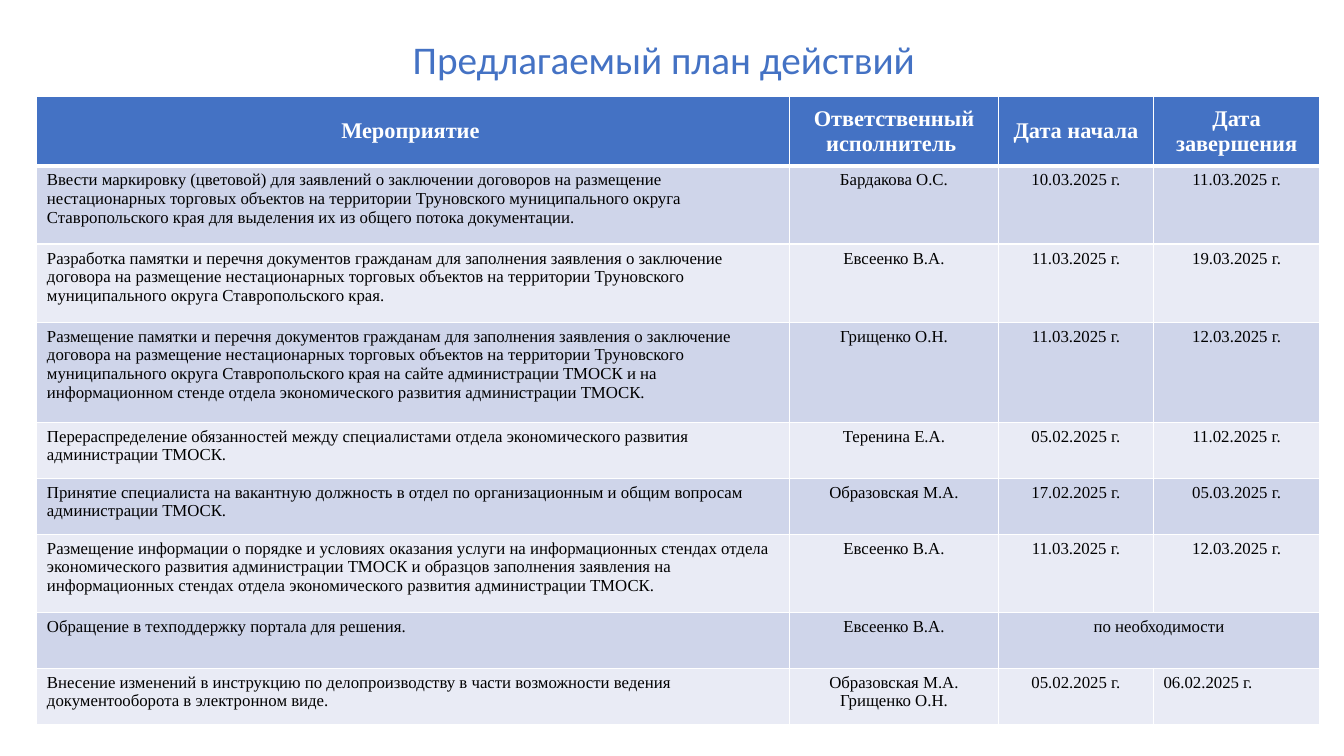
from lxml import etree
from pptx import Presentation
from pptx import util as u
from pptx.dml.color import RGBColor
from pptx.enum import text
from pptx.oxml.ns import qn

BLUE, WHITE, BLACK = "4472C4", "FFFFFF", "000000"
BANDS = ("CFD5EA", "E9EBF5")
MID, LEFT = text.PP_ALIGN.CENTER, text.PP_ALIGN.LEFT
TITLE = {"name": "Calibri", "size": u.Pt(28)}
HEAD = {"name": "Times New Roman", "size": u.Pt(16), "bold": True}
BODY = {"name": "Times New Roman", "size": u.Pt(12), "bold": False}

WIDTHS = (18.97, 5.26, 3.91, 4.19)
HEIGHTS = (1.74, 1.97, 1.97, 2.52, 1.41, 1.41, 1.97, 1.41, 1.41)
HEADS = ("Мероприятие ", "Ответственный исполнитель ", "Дата начала", "Дата завершения")
PLAN = (
    ("Ввести маркировку (цветовой) для заявлений о заключении договоров на размещение "
     "нестационарных торговых объектов на территории Труновского муниципального округа "
     "Ставропольского края для выделения их из общего потока документации.",
     "Бардакова О.С.", "10.03.2025 г.", "11.03.2025 г."),
    ("Разработка памятки и перечня документов гражданам для заполнения заявления о заключение "
     "договора на размещение нестационарных торговых объектов на территории Труновского "
     "муниципального округа Ставропольского края.",
     "Евсеенко В.А.", "11.03.2025 г.", "19.03.2025 г."),
    ("Размещение памятки и перечня документов гражданам для заполнения заявления о заключение "
     "договора на размещение нестационарных торговых объектов на территории Труновского "
     "муниципального округа Ставропольского края на сайте администрации ТМОСК и на "
     "информационном стенде отдела экономического развития администрации ТМОСК.",
     "Грищенко О.Н.", "11.03.2025 г.", "12.03.2025 г."),
    ("Перераспределение обязанностей между специалистами отдела экономического развития "
     "администрации ТМОСК.",
     "Теренина Е.А.", "05.02.2025 г.", "11.02.2025 г."),
    ("Принятие специалиста на вакантную должность в отдел по организационным и общим вопросам "
     "администрации ТМОСК.",
     "Образовская М.А.", "17.02.2025 г.", "05.03.2025 г."),
    ("Размещение информации о порядке и условиях оказания услуги на информационных стендах отдела "
     "экономического развития администрации ТМОСК и образцов заполнения заявления на "
     "информационных стендах отдела экономического развития администрации ТМОСК.",
     "Евсеенко В.А.", "11.03.2025 г.", "12.03.2025 г."),
    ("Обращение в техподдержку портала для решения.",
     "Евсеенко В.А.", "по необходимости", None),
    ("Внесение изменений в инструкцию по делопроизводству в части возможности ведения "
     "документооборота в электронном виде.",
     "Образовская М.А. Грищенко О.Н.", "05.02.2025 г.", "06.02.2025 г."),
)


def paint(color, code):
    color.rgb = RGBColor.from_string(code)


def write(frame, words, form, code, align):
    para = frame.paragraphs[0]
    para.alignment = align
    run = para.add_run()
    run.text = words
    for key, value in form.items():
        setattr(run.font, key, value)
    paint(run.font.color, code)
    return para


def edge(cell, **widths):
    """Draw white cell borders; widths in points by side L, R, T, B."""
    props = cell._tc.get_or_add_tcPr()
    for side, width in widths.items():
        line = etree.SubElement(props, qn(f"a:ln{side}"), w=str(u.Pt(width)))
        fill = etree.SubElement(line, qn("a:solidFill"))
        etree.SubElement(fill, qn("a:srgbClr"), val=WHITE)


def fill(cell, code):
    cell.fill.solid()
    paint(cell.fill.fore_color, code)


def add_title(slide):
    box = slide.shapes.add_textbox(u.Cm(4.37), u.Cm(0.69), u.Cm(24.94), u.Cm(1.73))
    frame = box.text_frame
    frame.word_wrap = True
    frame.vertical_anchor = text.MSO_ANCHOR.MIDDLE
    para = write(frame, "Предлагаемый план действий ", TITLE, BLUE, MID)
    para.line_spacing = 0.9


def add_head(table):
    for col, words in enumerate(HEADS):
        cell = table.cell(0, col)
        edge(cell, L=1, R=1, T=1, B=3)
        fill(cell, BLUE)
        cell.vertical_anchor = text.MSO_ANCHOR.MIDDLE
        write(cell.text_frame, words, HEAD, WHITE, MID)


def add_body(table):
    """Fill the plan rows; None joins a cell to the one on its left."""
    for row, items in enumerate(PLAN, 1):
        for col, words in enumerate(items):
            cell = table.cell(row, col)
            edge(cell, L=1, R=1, T=3 if row == 1 else 1, B=1)
            fill(cell, BANDS[(row - 1) % 2])
            if words is None:
                table.cell(row, col - 1).merge(cell)
                continue
            last = row == len(PLAN) and col == len(HEADS) - 1
            align = LEFT if col == 0 or last else MID
            write(cell.text_frame, words, BODY, BLACK, align)


def add_plan(slide):
    frame = slide.shapes.add_table(len(HEIGHTS), len(WIDTHS), u.Cm(0.93), u.Cm(2.44),
                                   u.Cm(sum(WIDTHS)), u.Cm(sum(HEIGHTS)))
    table = frame.table
    for col, width in zip(table.columns, WIDTHS):
        col.width = u.Cm(width)
    for row, height in zip(table.rows, HEIGHTS):
        row.height = u.Cm(height)
    add_head(table)
    add_body(table)


def main():
    deck = Presentation()
    deck.slide_width, deck.slide_height = u.Cm(33.87), u.Cm(19.05)
    slide = deck.slides.add_slide(deck.slide_layouts[6])
    add_title(slide)
    add_plan(slide)
    deck.save("out.pptx")


if __name__ == "__main__":
    main()
